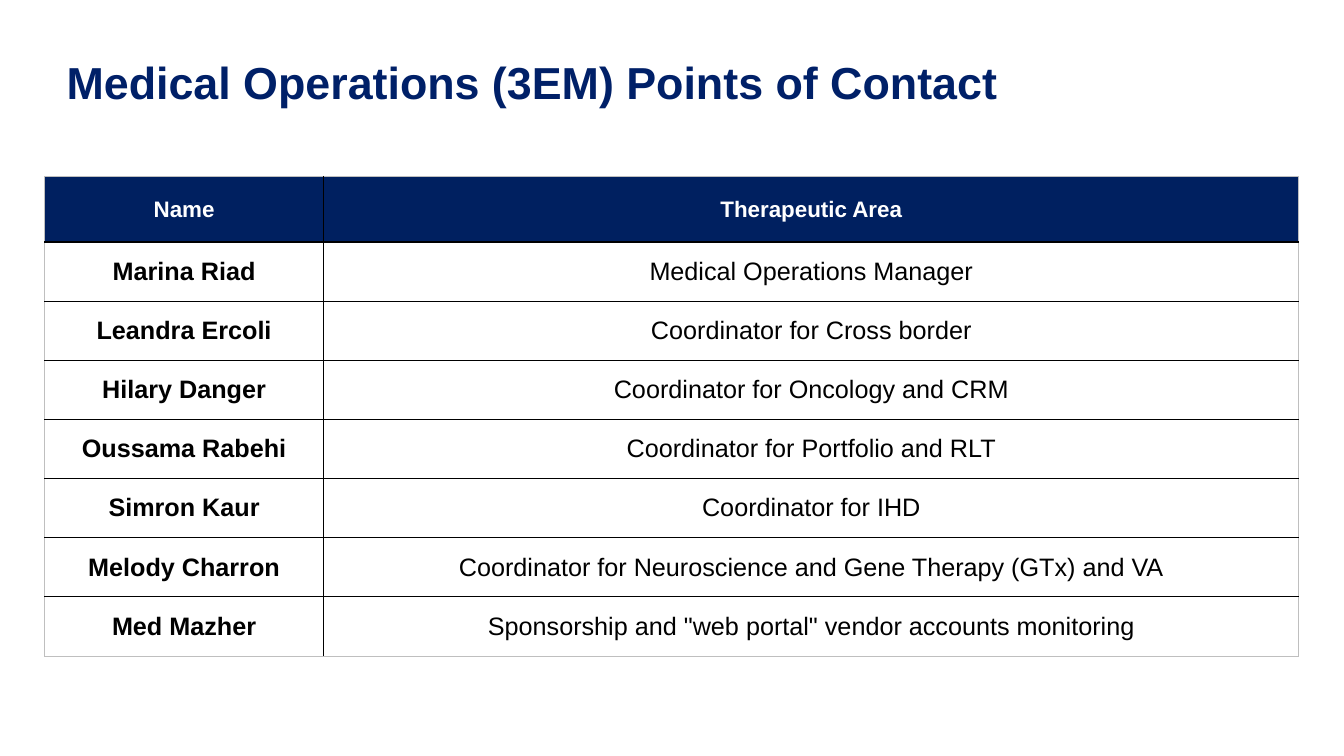
from lxml import etree
from pptx import Presentation
from pptx.dml.color import RGBColor
from pptx.enum import text
from pptx.oxml import ns
from pptx.util import Cm, Pt

COLORS = {
    "title": "002068",
    "header": "002060",
    "header_text": "FFFFFF",
    "body_text": "000000",
    "inner_line": "000000",
    "outer_line": "BFBFBF",
}
FONT = "Arial"
COLUMN_WIDTHS = (7.04, 24.57)
HEADER_HEIGHT, ROW_HEIGHT = 1.65, 1.49
HEADINGS = ("Name", "Therapeutic Area")
CONTACTS = [
    ("Marina Riad", "Medical Operations Manager"),
    ("Leandra Ercoli", "Coordinator for Cross border"),
    ("Hilary Danger", "Coordinator for Oncology and CRM"),
    ("Oussama Rabehi", "Coordinator for Portfolio and RLT"),
    ("Simron Kaur", "Coordinator for IHD"),
    ("Melody Charron", "Coordinator for Neuroscience and Gene Therapy (GTx) and VA"),
    ("Med Mazher", 'Sponsorship and "web portal" vendor accounts monitoring'),
]


def style_paragraph(paragraph, size, color, bold):
    font = paragraph.font
    font.name, font.size, font.bold = FONT, Pt(size), bold
    font.color.rgb = RGBColor.from_string(COLORS[color])


def add_title(slide, left, top, width, height):
    box = slide.shapes.add_textbox(Cm(left), Cm(top), Cm(width), Cm(height))
    frame = box.text_frame
    frame.word_wrap = True
    frame.margin_left = frame.margin_right = frame.margin_top = frame.margin_bottom = 0
    paragraph = frame.paragraphs[0]
    paragraph.text = "Medical Operations (3EM) Points of Contact"
    paragraph.line_spacing = 0.95
    style_paragraph(paragraph, 32, "title", True)


def set_borders(cell, outer_sides):
    """Draw pale lines on the outer sides of the table and black ones inside."""
    properties = cell._tc.get_or_add_tcPr()
    for index, side in enumerate("LRTB"):
        outer = side in outer_sides
        line = etree.Element(ns.qn(f"a:ln{side}"), w=str(Pt(0.5 if outer else 1)))
        fill = etree.SubElement(line, ns.qn("a:solidFill"))
        color = COLORS["outer_line" if outer else "inner_line"]
        etree.SubElement(fill, ns.qn("a:srgbClr"), val=color)
        properties.insert(index, line)


def fill_cell(cell, wording, is_header, is_name):
    cell.vertical_anchor = text.MSO_ANCHOR.MIDDLE
    paragraph = cell.text_frame.paragraphs[0]
    paragraph.text = wording
    paragraph.alignment = text.PP_ALIGN.CENTER
    if is_header:
        cell.fill.solid()
        cell.fill.fore_color.rgb = RGBColor.from_string(COLORS["header"])
        style_paragraph(paragraph, 16, "header_text", True)
    else:
        cell.fill.background()
        style_paragraph(paragraph, 18, "body_text", is_name)


def add_contact_table(slide, left, top):
    rows = [HEADINGS, *CONTACTS]
    heights = [HEADER_HEIGHT] + [ROW_HEIGHT] * len(CONTACTS)
    table = slide.shapes.add_table(
        len(rows), len(HEADINGS), Cm(left), Cm(top),
        Cm(sum(COLUMN_WIDTHS)), Cm(sum(heights)),
    ).table
    for column, width in zip(table.columns, COLUMN_WIDTHS):
        column.width = Cm(width)
    for row_index, (wordings, height) in enumerate(zip(rows, heights)):
        table.rows[row_index].height = Cm(height)
        for column_index, wording in enumerate(wordings):
            cell = table.cell(row_index, column_index)
            fill_cell(cell, wording, row_index == 0, column_index == 0)
            outer_sides = "L" if column_index == 0 else "R"
            if row_index == 0:
                outer_sides += "T"
            elif row_index == len(rows) - 1:
                outer_sides += "B"
            set_borders(cell, outer_sides)


def main():
    presentation = Presentation()
    presentation.slide_width, presentation.slide_height = Cm(33.87), Cm(19.05)
    slide = presentation.slides.add_slide(presentation.slide_layouts[6])
    add_contact_table(slide, 1.12, 4.45)
    add_title(slide, 1.68, 1.47, 26.8, 2.97)
    presentation.save("out.pptx")


if __name__ == "__main__":
    main()
